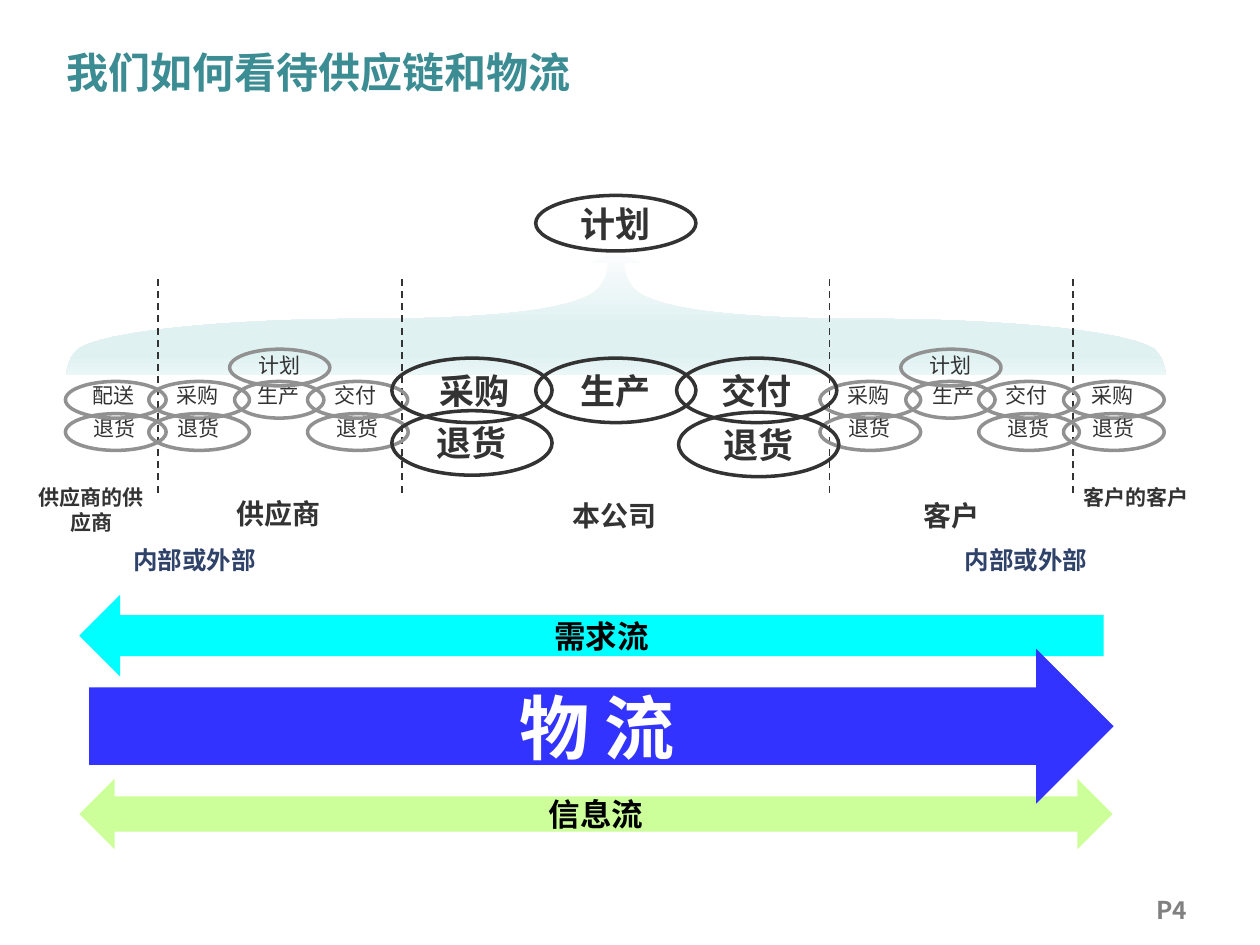
from lxml import etree
from pptx import Presentation
from pptx.dml.color import RGBColor
from pptx.enum.dml import MSO_LINE
from pptx.enum.shapes import MSO_CONNECTOR, MSO_SHAPE
from pptx.enum.text import MSO_ANCHOR, PP_ALIGN
from pptx.oxml.ns import qn
from pptx.util import Cm, Pt

OVAL = MSO_SHAPE.OVAL
LEFT, RIGHT = MSO_SHAPE.LEFT_ARROW, MSO_SHAPE.RIGHT_ARROW
BOTH = MSO_SHAPE.LEFT_RIGHT_ARROW
LINE, DASH = MSO_CONNECTOR.STRAIGHT, MSO_LINE.DASH
TOP, MID = MSO_ANCHOR.TOP, MSO_ANCHOR.MIDDLE
START, CENTER = PP_ALIGN.LEFT, PP_ALIGN.CENTER

SANS, ARIAL = "Noto Sans CJK SC", "Arial"
TEAL = RGBColor(0x3C, 0x8C, 0x93)
INK = RGBColor(0x33, 0x33, 0x33)
GRAY = RGBColor(0x91, 0x91, 0x91)
MUTED = RGBColor(0x80, 0x80, 0x80)
NAVY = RGBColor(0x2F, 0x42, 0x69)
CYAN = RGBColor(0x00, 0xFF, 0xFF)
BLUE = RGBColor(0x33, 0x33, 0xFF)
LIME = RGBColor(0xCC, 0xFF, 0x99)
BLACK = RGBColor(0, 0, 0)
WHITE = RGBColor(0xFF, 0xFF, 0xFF)
HAZE = [(0, "FCFDFE"), (60, "E0F1F2"), (83, "E0F1F2"), (100, "EBF6F7")]


def write(shape, text, size=12, color=INK, bold=True, font=SANS,
          align=CENTER, anchor=MID, pad=(0, 0, 0, 0)):
    """Fill a shape with one formatted paragraph; pad is left, top, right, bottom."""
    frame = shape.text_frame
    frame.word_wrap = True
    frame.vertical_anchor = anchor
    frame.margin_left, frame.margin_top, frame.margin_right, frame.margin_bottom = map(Cm, pad)
    para = frame.paragraphs[0]
    para.alignment = align
    run = para.add_run()
    run.text = text
    run.font.name, run.font.size, run.font.bold = font, Pt(size), bold
    run.font.color.rgb = color
    etree.SubElement(run.font._element, qn("a:ea"), typeface=SANS)


def label(slide, box, text, **form):
    write(slide.shapes.add_textbox(*map(Cm, box)), text, **form)


def oval(slide, box, color):
    shape = slide.shapes.add_shape(OVAL, *map(Cm, box))
    shape.shadow.inherit = False
    shape.fill.background()
    shape.line.color.rgb, shape.line.width = color, Pt(2)
    return shape


def bend(shape, first):
    """Join the line points from the given one on into cubic curves, three by three."""
    lines = list(shape._element.iter(qn("a:lnTo")))[first:]
    for one, two, end in zip(lines[::3], lines[1::3], lines[2::3]):
        cubic = etree.Element(qn("a:cubicBezTo"))
        one.addprevious(cubic)
        for line in (one, two, end):
            cubic.append(line[0])
            line.getparent().remove(line)


def canopy(slide, left, top, width):
    """Two mirrored halves spreading from the plan to the whole chain."""
    half = width / 2 + 0.02
    edge = [(half, 2.51), (half, 0), (10.59, 0.23), (10.92, 0.23)]
    curves = [
        (10.92, 0.23), (10.92, 0.71), (10.54, 0.89),
        (9.93, 1.22), (8.36, 1.37), (5.79, 1.37),
        (3.86, 1.37), (0.86, 1.55), (0.23, 1.98),
        (0, 2.18), (0, 2.51), (0, 2.51),
    ]
    for flip in (False, True):
        path = [(Cm(left + (width - x if flip else x)), Cm(top + y)) for x, y in edge + curves]
        pen = slide.shapes.build_freeform(*path[0])
        pen.add_line_segments(path[1:], close=False)
        shape = pen.convert_to_shape()
        bend(shape, len(edge) - 1)
        shape.shadow.inherit = False
        shape.line.fill.background()
        shape.fill.gradient()
        shape.fill.gradient_angle = 270
        stops = shape._element.spPr.find(".//" + qn("a:gsLst"))
        stops[:] = []
        for pos, tint in HAZE:
            stop = etree.SubElement(stops, qn("a:gs"), pos=str(pos * 1000))
            etree.SubElement(stop, qn("a:srgbClr"), val=tint)


def borders(slide, top, height):
    """Dashed borders between the firms."""
    for x in (3.18, 8.1, 16.72, 21.63):
        line = slide.shapes.add_connector(LINE, Cm(x), Cm(top + height), Cm(x), Cm(top))
        line.line.color.rgb, line.line.width = INK, Pt(1)
        line.line.dash_style = DASH
        etree.SubElement(line._element.spPr, qn("a:effectLst"))


def tier(slide, left, top, steps):
    """Small ovals of a partner: text, x, row, width, label shift."""
    for text, x, row, width, shift in steps:
        box = (left + x, top + row * 0.65, width, 0.74)
        oval(slide, box, GRAY)
        drop = 0 if row else 0.04
        label(slide, (box[0] + shift, box[1] + drop, width, 0.71), text, bold=False,
              anchor=TOP, pad=(0.03, 0.03, 0.05, 0.03))


def core(slide, left, top):
    """Large ovals of our own firm: text, x, y, height, left inset."""
    steps = [("采购", 0, 3.28, 1.3, 0.12), ("交付", 5.74, 3.28, 1.3, 0),
             ("生产", 2.9, 3.28, 1.3, 0), ("计划", 2.9, 0, 1.12, 0),
             ("退货", 0, 4.34, 1.3, 0), ("退货", 5.78, 4.37, 1.3, 0)]
    for text, x, y, height, inset in steps:
        write(oval(slide, (left + x, top + y, 3.23, height), INK), text, size=20,
              pad=(inset, 0, 0, 0))


def captions(slide, left, top):
    """Names of the firms below the chain."""
    names = [
        ("供应商的供应商", 0, 0, 2.69, 12, INK), ("供应商", 2.68, 0.25, 4.88, 16, INK),
        ("本公司", 7.57, 0.28, 8.64, 16, INK), ("客户", 16.24, 0.28, 4.88, 16, INK),
        ("客户的客户", 20.81, 0, 3.2, 12, INK),
        ("内部或外部", -0.6, 1.21, 8.05, 14, NAVY),
        ("内部或外部", 16.16, 1.21, 8.05, 14, NAVY),
    ]
    for text, x, y, width, size, color in names:
        label(slide, (left + x, top + y, width, 0.7), text, size=size, color=color,
              anchor=TOP, pad=(0.1, 0.1, 0.2, 0.1))


def flows(slide, left, top):
    """Demand, information and goods arrows."""
    arrows = [
        (LEFT, "需求流", (0, 0, 20.65, 1.65), CYAN, 18, BLACK, 0.25),
        (BOTH, "信息流", (0, 3.71, 20.83, 1.42), LIME, 18, BLACK, 0.25),
        (RIGHT, "物 流", (0.2, 1.09, 20.65, 3.12), BLUE, 40, WHITE, 0.85),
    ]
    for kind, text, (x, y, width, height), fill, size, color, inset in arrows:
        shape = slide.shapes.add_shape(kind, Cm(left + x), Cm(top + y), Cm(width), Cm(height))
        shape.shadow.inherit = False
        shape.fill.solid()
        shape.fill.fore_color.rgb = fill
        shape.line.fill.background()
        write(shape, text, size=size, color=color, font=ARIAL, pad=(inset, 0.13, 0.25, 0.13))


def build():
    deck = Presentation()
    deck.slide_width, deck.slide_height = Cm(25.4), Cm(19.05)
    slide = deck.slides.add_slide(deck.slide_layouts[5])

    # Title and page number
    title = slide.shapes.title
    title.left, title.top, title.width, title.height = map(Cm, (1.1, 0.43, 14.71, 2.03))
    write(title, "我们如何看待供应链和物流", size=24, color=TEAL, align=START,
          pad=(0.25, 0.13, 0.25, 0.13))
    label(slide, (22.82, 17.92, 1.6, 0.76), "P4", size=14, color=MUTED,
          anchor=TOP, pad=(0.25, 0.13, 0.25, 0.13))

    # Supply chain
    canopy(slide, 1.34, 5.06, 22.16)
    borders(slide, 5.56, 4.37)
    firm = [("生产", 1.73, 1, 1.8, 0), ("采购", 0, 1, 2.03, -0.03),
            ("退货", 3.2, 2, 2.03, 0), ("计划", 1.63, 0, 2.02, 0),
            ("交付", 3.2, 1, 2.02, -0.03), ("退货", 0, 2, 2.03, -0.01)]
    client = [("生产", 1.73, 1, 1.8, 0.08)] + firm[1:]
    tier(slide, 1.32, 7.04, [("退货", 0, 2, 2.03, -0.01), ("配送", 0, 1, 2.03, -0.03)])
    tier(slide, 16.53, 7.04, client)
    tier(slide, 21.44, 7.04, [("采购", 0, 1, 2.03, -0.02), ("退货", 0, 2, 2.03, 0)])
    tier(slide, 3, 7.04, firm)
    core(slide, 7.9, 3.94)
    captions(slide, 0.55, 9.67)

    # Flows
    flows(slide, 1.6, 11.99)
    deck.save("out.pptx")


if __name__ == "__main__":
    build()
